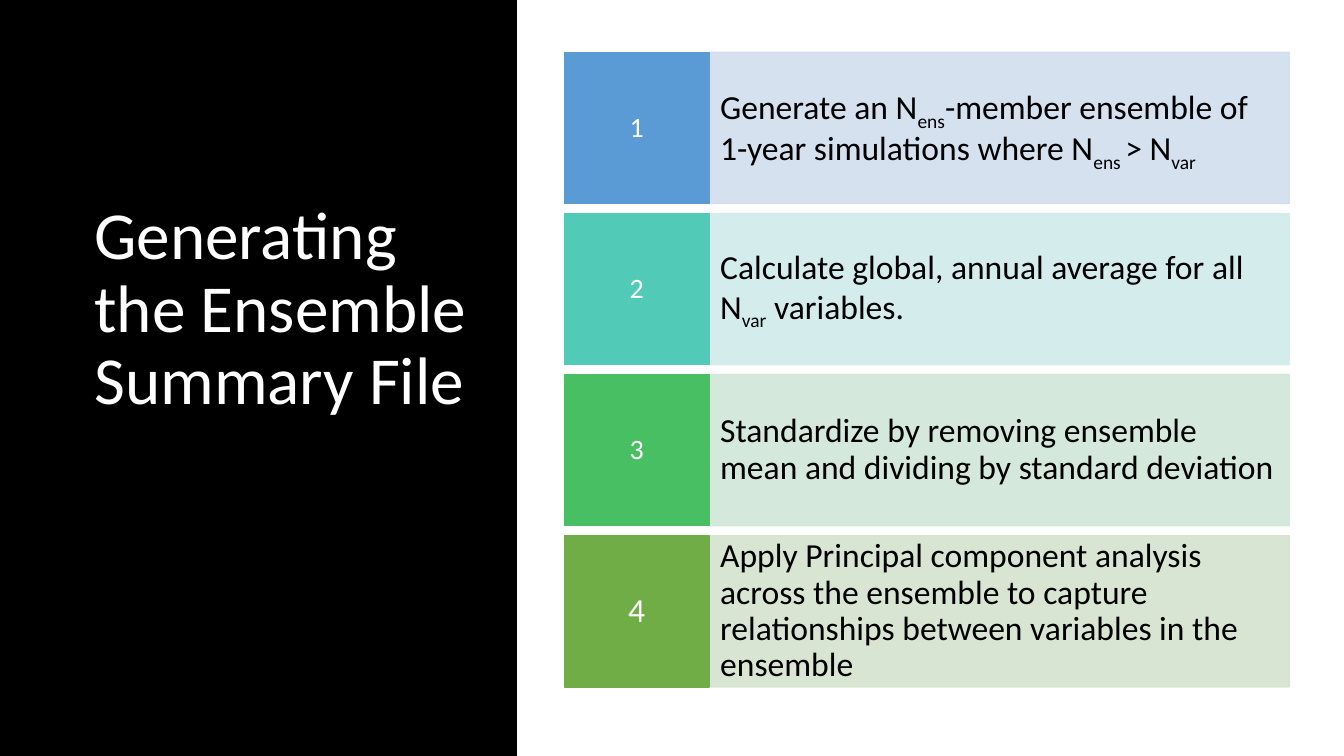
import pptx
import pptx.util
import pptx.dml.color
import pptx.enum.shapes
import pptx.enum.text
import pptx.oxml
import pptx.oxml.ns
from lxml import etree

Cm = pptx.util.Cm
Pt = pptx.util.Pt
ALIGN = pptx.enum.text.PP_ALIGN
ANCHOR = pptx.enum.text.MSO_ANCHOR

TITLE = "Generating the Ensemble Summary File"
# Each step: number size, number colour, band colour, then text runs
# that alternate between normal and subscript.
STEPS = [
    (20, "blue", "pale blue",
     ["Generate an N", "ens", "-member ensemble of 1-year simulations where N",
      "ens ", "> N", "var"]),
    (20, "teal", "pale teal",
     ["Calculate global, annual average for all N", "var", " variables."]),
    (20, "green", "pale green",
     ["Standardize by removing ensemble mean and dividing by standard deviation"]),
    (24, "olive", "pale olive",
     ["Apply Principal component analysis across the ensemble to capture "
      "relationships between variables in the ensemble"]),
]
COLORS = {
    "black": "000000", "white": "FFFFFF",
    "blue": "5B9BD5", "pale blue": "D2DEEF",
    "teal": "52CAB8", "pale teal": "D0ECEA",
    "green": "49BF64", "pale green": "D0E7D8",
    "olive": "70AD47", "pale olive": "D5E3CF",
}
FONT = "Calibri"

PAGE_WIDTH, PAGE_HEIGHT = 33.87, 19.05
PANEL_WIDTH = 13.03
STEP_TOP, STEP_PITCH, STEP_HEIGHT = 1.32, 4.06, 3.81
NUMBER_LEFT, NUMBER_WIDTH = 14.22, 3.65
BAND_LEFT, BAND_WIDTH = NUMBER_LEFT + NUMBER_WIDTH, 14.62


def rgb(name):
    return pptx.dml.color.RGBColor.from_string(COLORS[name])


def add_rectangle(page, left, top, width, height, color, outlined=True, opacity=100):
    box = page.shapes.add_shape(pptx.enum.shapes.MSO_SHAPE.RECTANGLE,
                                Cm(left), Cm(top), Cm(width), Cm(height))
    box.shadow.inherit = False
    box.fill.solid()
    box.fill.fore_color.rgb = rgb(color)
    if outlined:
        box.line.color.rgb = rgb(color)
        box.line.width = Pt(1)
    else:
        box.line.fill.background()
    if opacity < 100:
        for tint in box.element.spPr.iter(pptx.oxml.ns.qn("a:srgbClr")):
            alpha = etree.SubElement(tint, pptx.oxml.ns.qn("a:alpha"))
            alpha.set("val", str(opacity * 1000))
    return box


def write_text(box, runs, size, color, align=ALIGN.LEFT, anchor=ANCHOR.MIDDLE,
               margins=(0.25, 0.13)):
    """Fill the box with runs that alternate between normal and subscript."""
    frame = box.text_frame
    frame.word_wrap = True
    frame.auto_size = pptx.enum.text.MSO_AUTO_SIZE.NONE
    frame.vertical_anchor = anchor
    frame.margin_left = frame.margin_right = Cm(margins[0])
    frame.margin_top = frame.margin_bottom = Cm(margins[1])
    para = frame.paragraphs[0]
    para.alignment = align
    para.line_spacing = 0.9
    for index, text in enumerate(runs):
        span = para.add_run()
        span.text = text
        span.font.name = FONT
        span.font.size = Pt(size)
        span.font.color.rgb = rgb(color)
        if index % 2:
            span.font._element.set("baseline", "-25000")


def add_step(page, index, number_size, color, band_color, runs):
    top = STEP_TOP + index * STEP_PITCH
    band = add_rectangle(page, BAND_LEFT, top, BAND_WIDTH, STEP_HEIGHT,
                         band_color, opacity=90)
    write_text(band, runs, 24, "black", margins=(0.28, 0.97))
    number = add_rectangle(page, NUMBER_LEFT, top, NUMBER_WIDTH, STEP_HEIGHT, color)
    write_text(number, [str(index + 1)], number_size, "white",
               align=ALIGN.CENTER, margins=(0.2, 0.38))


def main():
    deck = pptx.Presentation()
    deck.slide_width, deck.slide_height = Cm(PAGE_WIDTH), Cm(PAGE_HEIGHT)
    page = deck.slides.add_slide(deck.slide_layouts.get_by_name("Title Only"))

    title = page.shapes.title
    title.left, title.top = Cm(2.13), Cm(4.95)
    title.width, title.height = Cm(9.96), Cm(8.89)
    write_text(title, [TITLE], 48, "white", anchor=ANCHOR.TOP)

    panel = add_rectangle(page, 0, 0, PANEL_WIDTH, PAGE_HEIGHT, "black", outlined=False)
    title.element.addprevious(panel.element)  # the panel lies behind the title

    for index, step in enumerate(STEPS):
        add_step(page, index, *step)

    deck.save("out.pptx")


if __name__ == "__main__":
    main()
